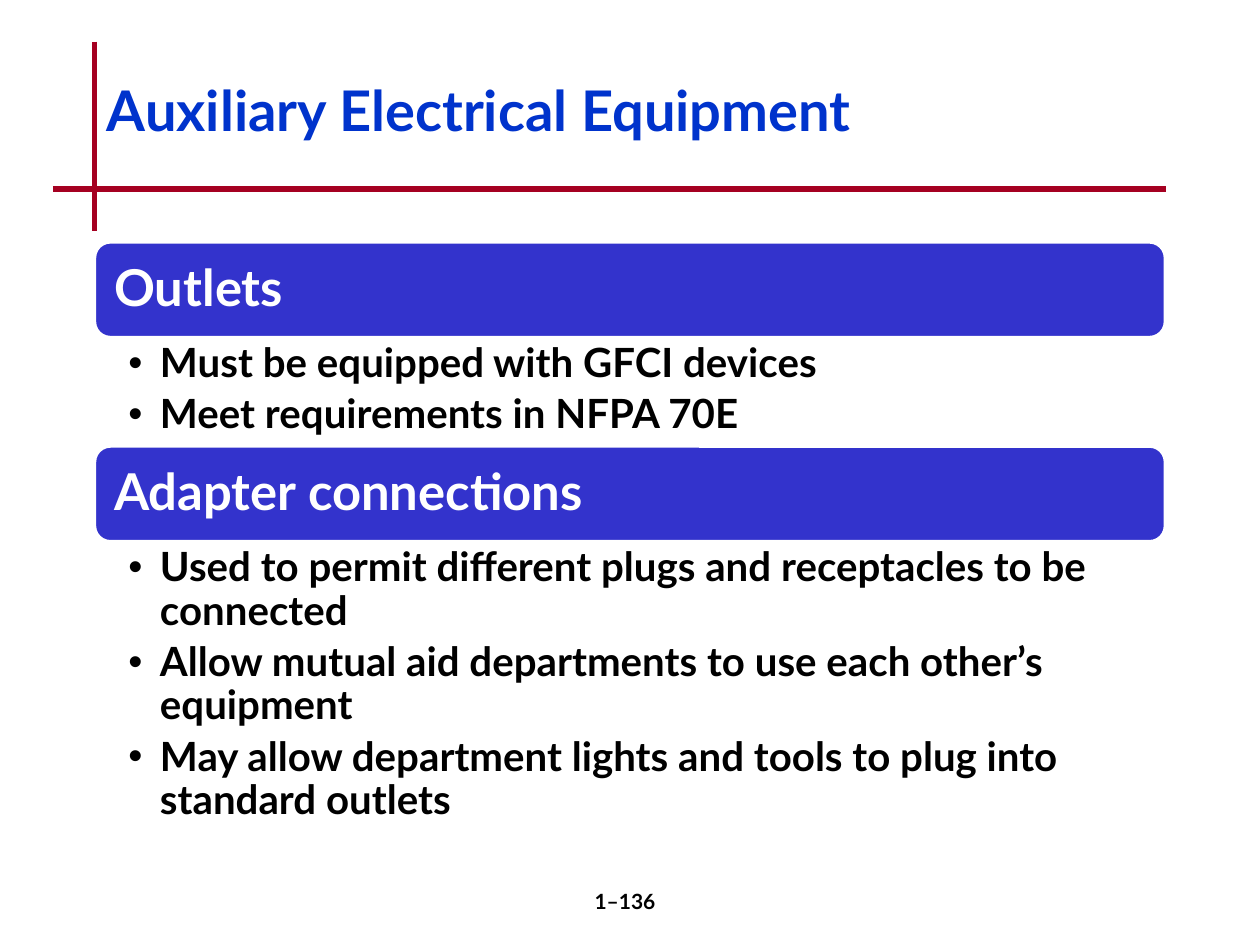
from dataclasses import dataclass

from lxml import etree
from pptx import Presentation
from pptx.dml.color import RGBColor
from pptx.enum import shapes, text
from pptx.oxml import ns
from pptx.util import Inches, Pt

FONT = "Lato"
RED = RGBColor(0xA5, 0x00, 0x21)
TITLE_BLUE = RGBColor(0x00, 0x33, 0xCC)
BAR_BLUE = RGBColor(0x33, 0x33, 0xCC)
WHITE = RGBColor(0xFF, 0xFF, 0xFF)
BLACK = RGBColor(0x00, 0x00, 0x00)

LEFT, WIDTH = 0.75, 8.5
BAR_HEIGHT = 0.76


@dataclass
class Section:
    heading: str
    bullets: list[str]
    top: float
    body_height: float


SECTIONS = [
    Section(
        "Outlets",
        ["Must be equipped with GFCI devices", "Meet requirements in NFPA 70E"],
        1.92,
        0.85,
    ),
    Section(
        "Adapter connections",
        [
            "Used to permit different plugs and receptacles to be connected",
            "Allow mutual aid departments to use each other’s equipment",
            "May allow department lights and tools to plug into standard outlets",
        ],
        3.54,
        2.36,
    ),
]


def add_rule(s, x1: float, y1: float, x2: float, y2: float) -> None:
    line = s.shapes.add_connector(
        shapes.MSO_CONNECTOR.STRAIGHT, Inches(x1), Inches(y1), Inches(x2), Inches(y2)
    )
    line.line.color.rgb = RED
    line.line.width = Pt(3)
    etree.SubElement(line._element.spPr, ns.qn("a:effectLst"))


def add_box(s, left: float, top: float, width: float, height: float):
    return s.shapes.add_textbox(Inches(left), Inches(top), Inches(width), Inches(height))


def set_frame(sp, anchor, left: float = 0.1, right: float = 0.1, vertical: float = 0.05):
    tf = sp.text_frame
    tf.word_wrap = True
    tf.vertical_anchor = anchor
    tf.margin_left, tf.margin_right = Inches(left), Inches(right)
    tf.margin_top = tf.margin_bottom = Inches(vertical)
    return tf


def write(p, words: str, size: float, color: RGBColor, spacing: float = 1.0,
          align=text.PP_ALIGN.LEFT) -> None:
    p.alignment = align
    p.line_spacing = spacing
    r = p.add_run()
    r.text = words
    r.font.name = FONT
    r.font.size = Pt(size)
    r.font.bold = True
    r.font.color.rgb = color


def add_bullet(p) -> None:
    pPr = p._p.get_or_add_pPr()
    pPr.set("marL", str(Inches(0.25)))
    pPr.set("indent", str(Inches(-0.25)))
    etree.SubElement(pPr, ns.qn("a:buFont"), typeface="Arial")
    etree.SubElement(pPr, ns.qn("a:buChar"), char="•")


def add_section(s, section: Section) -> None:
    bar = s.shapes.add_shape(
        shapes.MSO_SHAPE.ROUNDED_RECTANGLE,
        Inches(LEFT), Inches(section.top), Inches(WIDTH), Inches(BAR_HEIGHT),
    )
    bar.shadow.inherit = False
    bar.fill.solid()
    bar.fill.fore_color.rgb = BAR_BLUE
    bar.line.color.rgb = WHITE
    bar.line.width = Pt(2)
    tf = set_frame(bar, text.MSO_ANCHOR.MIDDLE, 0.12, 0.12, 0.12)
    write(tf.paragraphs[0], section.heading, 29, WHITE, 0.9)

    body = add_box(s, LEFT, section.top + BAR_HEIGHT, WIDTH, section.body_height)
    tf = set_frame(body, text.MSO_ANCHOR.TOP, 0.27, 0.23, 0.04)
    for i, words in enumerate(section.bullets):
        p = tf.add_paragraph() if i else tf.paragraphs[0]
        add_bullet(p)
        p.space_after = Pt(4.6)
        write(p, words, 23, BLACK, 0.9)


def main() -> None:
    prs = Presentation()
    prs.slide_width, prs.slide_height = Inches(10), Inches(7.5)
    s = prs.slides.add_slide(prs.slide_layouts[6])

    add_rule(s, LEFT, 0.33, LEFT, 1.83)
    add_rule(s, 0.42, 1.5, 9.25, 1.5)

    number = set_frame(add_box(s, 3.92, 7, 2.08, 0.5), text.MSO_ANCHOR.TOP)
    write(number.paragraphs[0], "1–136", 12, BLACK, align=text.PP_ALIGN.CENTER)

    title = set_frame(add_box(s, LEFT, 0.33, WIDTH, 1.17), text.MSO_ANCHOR.MIDDLE)
    write(title.paragraphs[0], "Auxiliary Electrical Equipment", 32, TITLE_BLUE, 0.8)

    for section in SECTIONS:
        add_section(s, section)

    prs.save("out.pptx")


if __name__ == "__main__":
    main()
